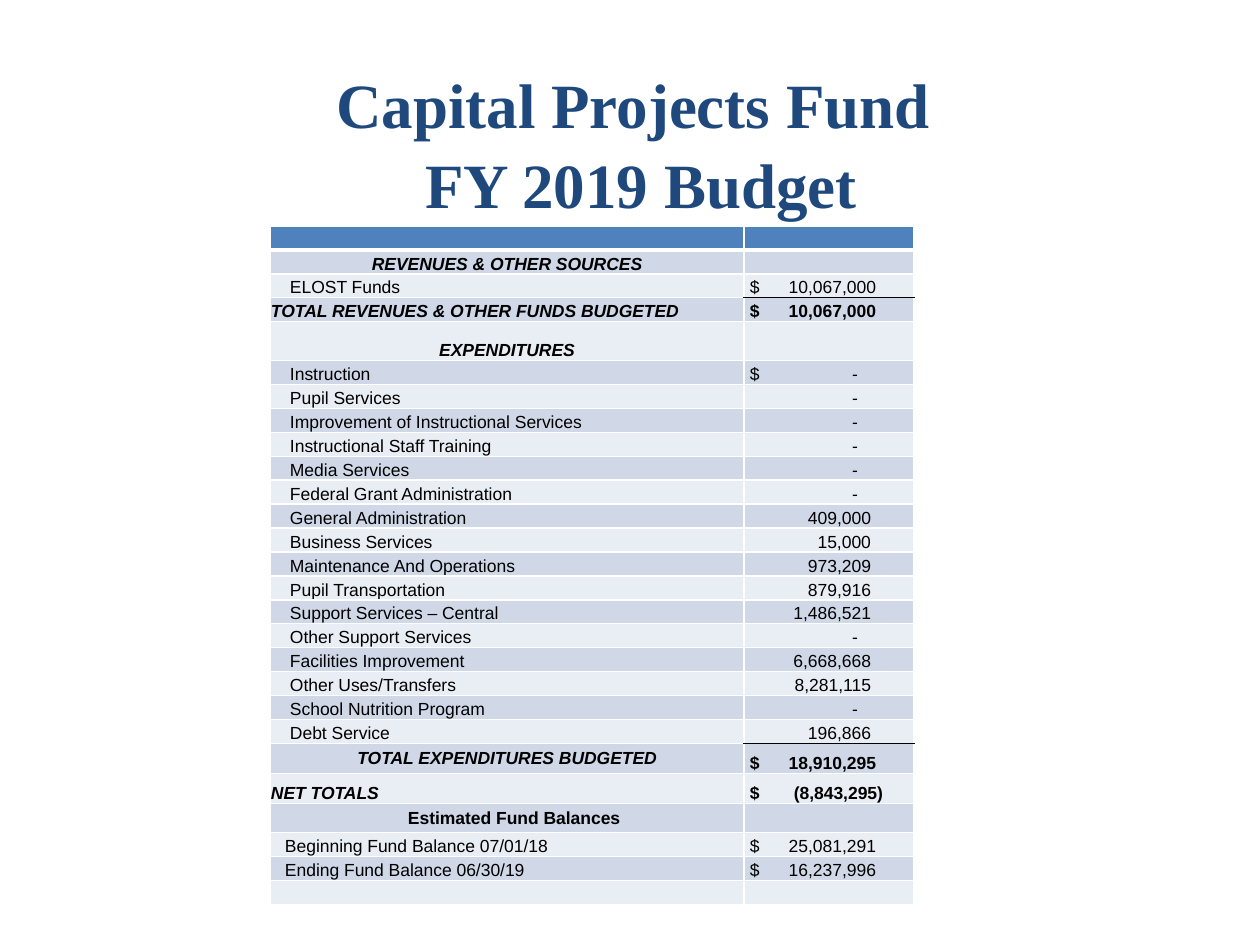
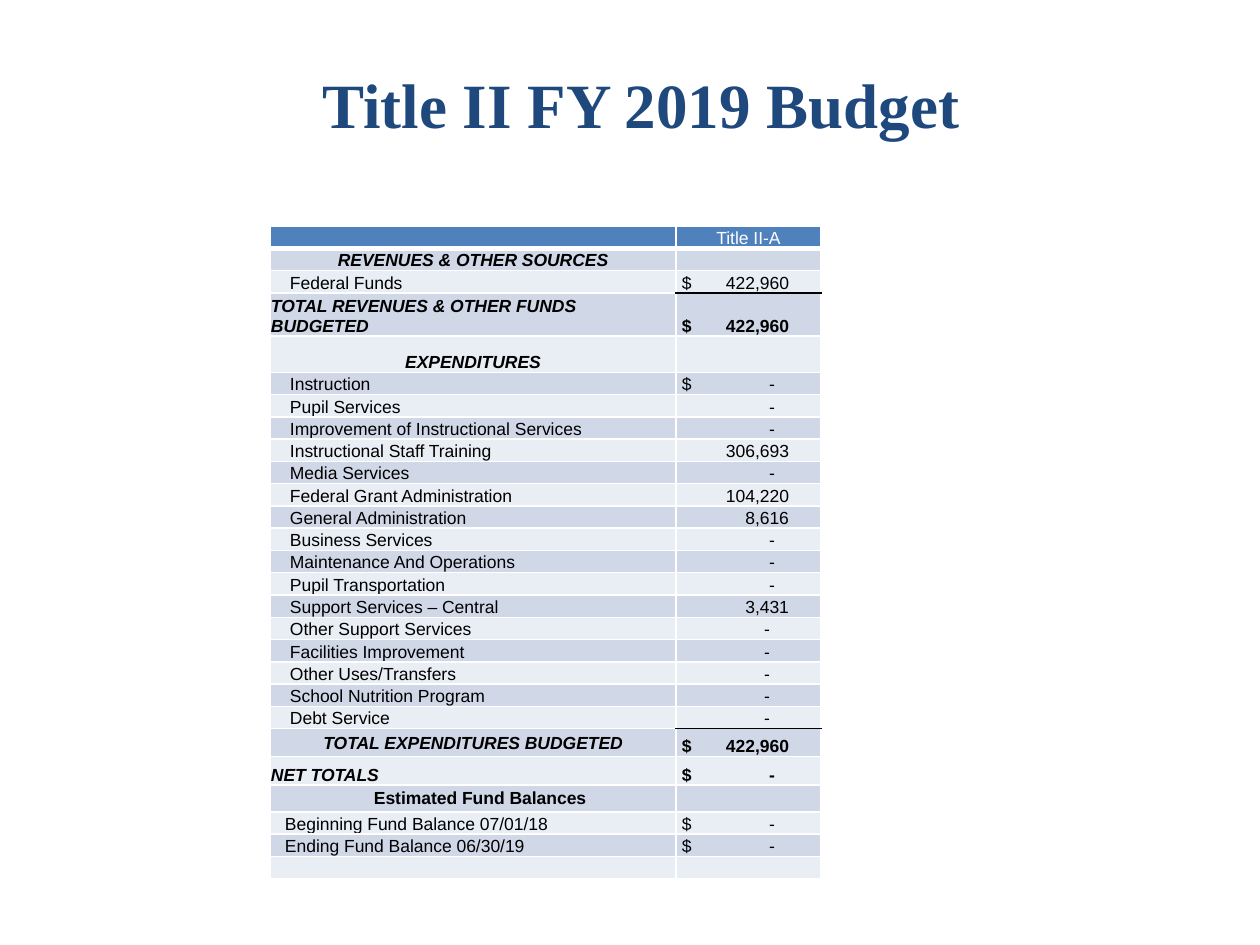
import collections
import dataclasses
import itertools

import lxml.etree
import pptx
import pptx.dml.color
import pptx.enum.text
import pptx.oxml.ns
import pptx.util

ALIGN = pptx.enum.text.PP_ALIGN
ANCHOR = pptx.enum.text.MSO_ANCHOR


@dataclasses.dataclass(frozen=True)
class Theme:
    navy: str = "1F497D"
    blue: str = "4F81BD"
    bands: tuple = ("E9EDF4", "D0D8E8")
    white: str = "FFFFFF"
    black: str = "000000"
    serif: str = "Times New Roman"
    sans: str = "Arial"
    large: int = 36
    small: int = 10


# Row kinds: bold, italic, centred, middle anchor, left inset, height weight
Kind = collections.namedtuple("Kind", "bold italic mid center inset weight")
BLANK = Kind(False, False, False, False, 1, 19)
HEAD = Kind(True, True, True, False, 1, 19)
SPEND = HEAD._replace(weight=31)
ITEM = BLANK._replace(inset=20)
SUM = HEAD._replace(mid=False)
TOTAL = HEAD._replace(center=True, weight=24)
NET = SUM._replace(weight=24)
FUNDS = Kind(True, False, True, True, 15, 23)
FUND = BLANK._replace(inset=15)

COSTS = [
    "Instruction", "Pupil Services", "Improvement of Instructional Services",
    "Instructional Staff Training", "Media Services",
    "Federal Grant Administration", "General Administration",
    "Business Services", "Maintenance And Operations",
    "Pupil Transportation", "Support Services – Central",
    "Other Support Services", "Facilities Improvement",
    "Other Uses/Transfers", "School Nutrition Program", "Debt Service",
]
LATE = COSTS[11:]

# Right edges of the amounts, measured from the dollar sign
Stops = collections.namedtuple("Stops", "cash plain dash late")


def budget(head, source, income, costs, total, net, funds):
    """Return the rows of a budget table as (label, amount, kind)."""
    return [
        ("", head, BLANK),
        ("REVENUES & OTHER SOURCES", "", HEAD),
        (source, "$" + income, ITEM),
        ("TOTAL REVENUES & OTHER FUNDS BUDGETED", "$" + income, SUM),
        ("EXPENDITURES", "", SPEND),
        *((name, costs.get(name, "-") if n else "$-", ITEM)
          for n, name in enumerate(COSTS)),
        ("TOTAL EXPENDITURES BUDGETED", "$" + total, TOTAL),
        ("NET TOTALS", "$" + net, NET),
        ("Estimated Fund Balances", "", FUNDS),
        ("Beginning Fund Balance 07/01/18", "$" + funds[0], FUND),
        ("Ending Fund Balance 06/30/19", "$" + funds[1], FUND),
        ("", "", BLANK),
    ]


class Deck:
    def __init__(self, theme):
        self.theme = theme
        self.prs = pptx.Presentation()
        self.prs.slide_width = self.px(1260)
        self.prs.slide_height = self.px(945)
        self.slide = None

    def px(self, count):
        return pptx.util.Emu(round(count * 914400 / 126))

    def page(self):
        self.slide = self.prs.slides.add_slide(self.prs.slide_layouts[6])

    def font(self, para, face, size, color, bold=False, italic=False):
        font = para.font
        font.name, font.size = face, pptx.util.Pt(size)
        font.bold, font.italic = bold, italic
        font.color.rgb = pptx.dml.color.RGBColor.from_string(color)

    def title(self, lines, high):
        box = self.slide.shapes.add_textbox(
            self.px(74), self.px(53), self.px(1134), self.px(high))
        frame = box.text_frame
        frame.word_wrap = True
        frame.margin_top, frame.margin_bottom = self.px(13), 0
        for n, line in enumerate(lines):
            para = frame.add_paragraph() if n else frame.paragraphs[0]
            para.text, para.alignment = line, ALIGN.CENTER
            if n:
                para.space_before = pptx.util.Pt(2)
            self.font(para, self.theme.serif, self.theme.large,
                      self.theme.navy, True)

    def sub(self, parent, tag, **attrs):
        return lxml.etree.SubElement(
            parent, pptx.oxml.ns.qn("a:" + tag), **attrs)

    def edges(self, cell, top, base, thick):
        props = cell._tc.get_or_add_tcPr()
        white = self.theme.white
        for side, color, width in (("L", white, 1), ("R", white, 1),
                                   ("T", top, 1), ("B", base, thick)):
            line = self.sub(props, "ln" + side,
                            w=str(pptx.util.Pt(width)))
            self.sub(self.sub(line, "solidFill"), "srgbClr", val=color)

    def cell(self, cell, text, fill, color, kind, stop=None):
        cell.margin_left = self.px(kind.inset)
        cell.margin_right = cell.margin_top = self.px(1)
        cell.margin_bottom = 0
        cell.vertical_anchor = ANCHOR.MIDDLE if kind.center else ANCHOR.BOTTOM
        cell.fill.solid()
        cell.fill.fore_color.rgb = pptx.dml.color.RGBColor.from_string(fill)
        para = cell.text_frame.paragraphs[0]
        para.text = text
        para.alignment = ALIGN.CENTER if kind.mid else ALIGN.LEFT
        if stop:
            tabs = self.sub(para._p.get_or_add_pPr(), "tabLst")
            self.sub(tabs, "tab", pos=str(self.px(stop)), algn="r")
        self.font(para, self.theme.sans, self.theme.small, color,
                  kind.bold, kind.italic)
        if not text:
            self.sub(para._p, "endParaRPr", sz=str(self.theme.small * 100))

    def amount(self, cell, label, text, fill, kind, stops):
        value = text.lstrip("$")
        if value == "-":
            stop = stops.late if label in LATE else stops.dash
        elif text.startswith("$"):
            stop = stops.cash + 7 * value.endswith(")")
        else:
            stop = stops.plain
        sign = "$" if text.startswith("$") else ""
        look = BLANK._replace(bold=kind.bold, inset=6)
        self.cell(cell, f"{sign}\t{value}" if value else "", fill,
                  self.theme.black, look, stop if value else None)

    def table(self, rows, cols, high, stops):
        theme = self.theme
        frame = self.slide.shapes.add_table(
            len(rows), len(cols), self.px(270), self.px(226),
            self.px(sum(cols)), self.px(high))
        grid = frame.table
        grid.first_row = grid.horz_banding = False
        for col, wide in zip(grid.columns, cols):
            col.width = self.px(wide)

        # Heights share the table height by weight
        unit = high / sum(kind.weight for _, _, kind in rows)
        for row, (_, _, kind) in zip(grid.rows, rows):
            row.height = self.px(unit * kind.weight)

        # A black rule runs above each total
        ruled = [n for n, row in enumerate(rows) if row[2] in (SUM, TOTAL)]
        for n, c in itertools.product(range(len(rows)), range(2)):
            top = theme.black if c and n in ruled else theme.white
            base = theme.black if c and n + 1 in ruled else theme.white
            self.edges(grid.cell(n, c), top, base, 1 if n else 3)

        for n, (label, text, kind) in enumerate(rows):
            left, right = grid.cell(n, 0), grid.cell(n, 1)
            fill = theme.bands[n % 2] if n else theme.blue
            self.cell(left, label, fill, theme.black, kind)
            if n:
                self.amount(right, label, text, fill, kind, stops)
            else:
                self.cell(right, text, fill, theme.white,
                          BLANK._replace(mid=True))


def main():
    deck = Deck(Theme())

    # Capital projects
    deck.page()
    deck.title(["Capital Projects Fund ", "FY 2019 Budget"], 173)
    costs = {
        "General Administration": "409,000",
        "Business Services": "15,000",
        "Maintenance And Operations": "973,209",
        "Pupil Transportation": "879,916",
        "Support Services – Central": "1,486,521",
        "Facilities Improvement": "6,668,668",
        "Other Uses/Transfers": "8,281,115",
        "Debt Service": "196,866",
    }
    rows = budget("", "ELOST Funds", "10,067,000", costs, "18,910,295",
                  "(8,843,295)", ("25,081,291", "16,237,996"))
    deck.table(rows, (474, 170), 679, Stops(126, 121, 108, 108))

    # Title II
    deck.page()
    deck.title(["Title II FY 2019 Budget"], 103)
    costs = {
        "Instructional Staff Training": "306,693",
        "Federal Grant Administration": "104,220",
        "General Administration": "8,616",
        "Support Services – Central": "3,431",
    }
    rows = budget("Title II-A", "Federal Funds", "422,960", costs, "422,960",
                  "-", ("-", "-"))
    deck.table(rows, (406, 145), 632, Stops(107, 107, 93, 88))

    deck.prs.save("out.pptx")


if __name__ == "__main__":
    main()
